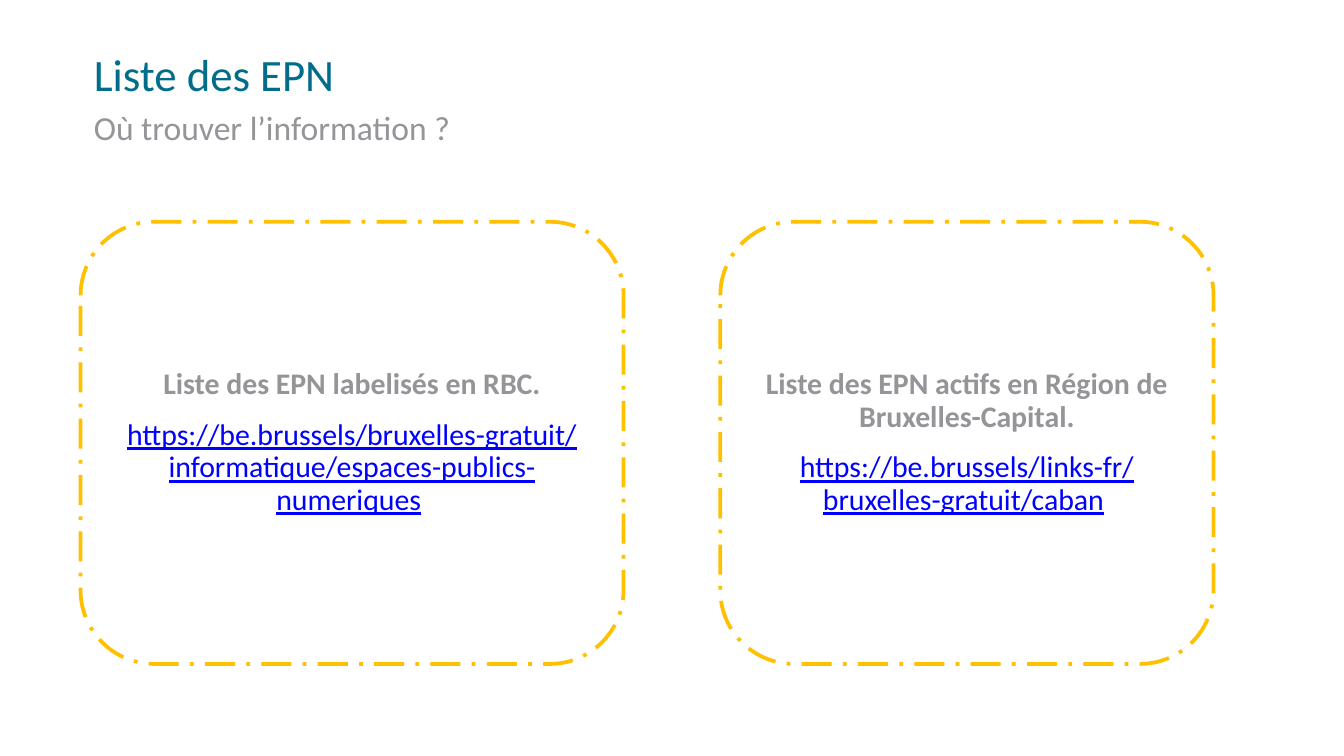
from dataclasses import dataclass

from lxml import etree
from pptx import Presentation
from pptx import util as u
from pptx.dml.color import RGBColor
from pptx.enum import dml, shapes, text
from pptx.oxml import ns

TEAL = RGBColor(0x00, 0x6D, 0x8B)
GREY = RGBColor(0x94, 0x94, 0x99)
BLUE = RGBColor(0x00, 0x00, 0xFF)
GOLD = RGBColor(0xFF, 0xC0, 0x00)
WHITE = RGBColor(0xFF, 0xFF, 0xFF)

WIDE = u.Inches(10)
HIGH = WIDE * 9 // 16
LEFT = 0.6


@dataclass
class Head:
    top: float
    words: str
    size: int
    color: RGBColor


@dataclass
class Card:
    left: float
    width: float
    label: str
    url: str


HEADS = [
    Head(0.78, "Où trouver l’information ?", 18, GREY),
    Head(0.34, "Liste des EPN", 24, TEAL),
]
CARDS = [
    Card(LEFT, 4.04, "Liste des EPN labelisés en RBC.",
         "https://be.brussels/bruxelles-gratuit/informatique/espaces-publics-numeriques"),
    Card(5.36, 3.67, "Liste des EPN actifs en Région de Bruxelles-Capital.",
         "https://be.brussels/links-fr/bruxelles-gratuit/caban"),
]


def write(para, words: str, size: int, color: RGBColor, **extra) -> None:
    """Add one formatted run to a paragraph."""
    para.line_spacing = 0.9
    run = para.add_run()
    run.text = words
    form = {"name": "Calibri", "size": u.Pt(size), **extra}
    for key, value in form.items():
        setattr(run.font, key, value)
    run.font.color.rgb = color


def add_head(slide, head: Head) -> None:
    box = slide.shapes.add_textbox(
        u.Inches(LEFT), u.Inches(head.top), u.Inches(6.3), u.Inches(0.64))
    box.text_frame.word_wrap = True
    write(box.text_frame.paragraphs[0], head.words, head.size, head.color)


def add_card(slide, card: Card) -> None:
    box = slide.shapes.add_shape(
        shapes.MSO_SHAPE.ROUNDED_RECTANGLE, u.Inches(card.left),
        u.Inches(1.65), u.Inches(card.width), u.Inches(3.29))
    box.shadow.inherit = False

    # Translucent white fill, dashed gold outline
    box.fill.solid()
    box.fill.fore_color.rgb = WHITE
    tint = box.fill._xPr.find(".//" + ns.qn("a:srgbClr"))
    etree.SubElement(tint, ns.qn("a:alpha"), val="83000")
    box.line.color.rgb = GOLD
    box.line.width = u.Pt(2)
    box.line.dash_style = dml.MSO_LINE.LONG_DASH_DOT

    # Label above its address
    frame = box.text_frame
    frame.word_wrap = True
    frame.vertical_anchor = text.MSO_ANCHOR.MIDDLE
    label, link = frame.paragraphs[0], frame.add_paragraph()
    for para in (label, link):
        para.alignment = text.PP_ALIGN.CENTER
    link.space_before = u.Pt(10)
    write(label, card.label, 16, GREY, bold=True)
    write(link, card.url, 16, BLUE, underline=True)
    write(link, " ", 16, GREY)


def main() -> None:
    deck = Presentation()
    deck.slide_width = WIDE
    deck.slide_height = HIGH
    slide = deck.slides.add_slide(deck.slide_layouts[6])
    for head in HEADS:
        add_head(slide, head)
    for card in CARDS:
        add_card(slide, card)
    deck.save("out.pptx")


if __name__ == "__main__":
    main()
